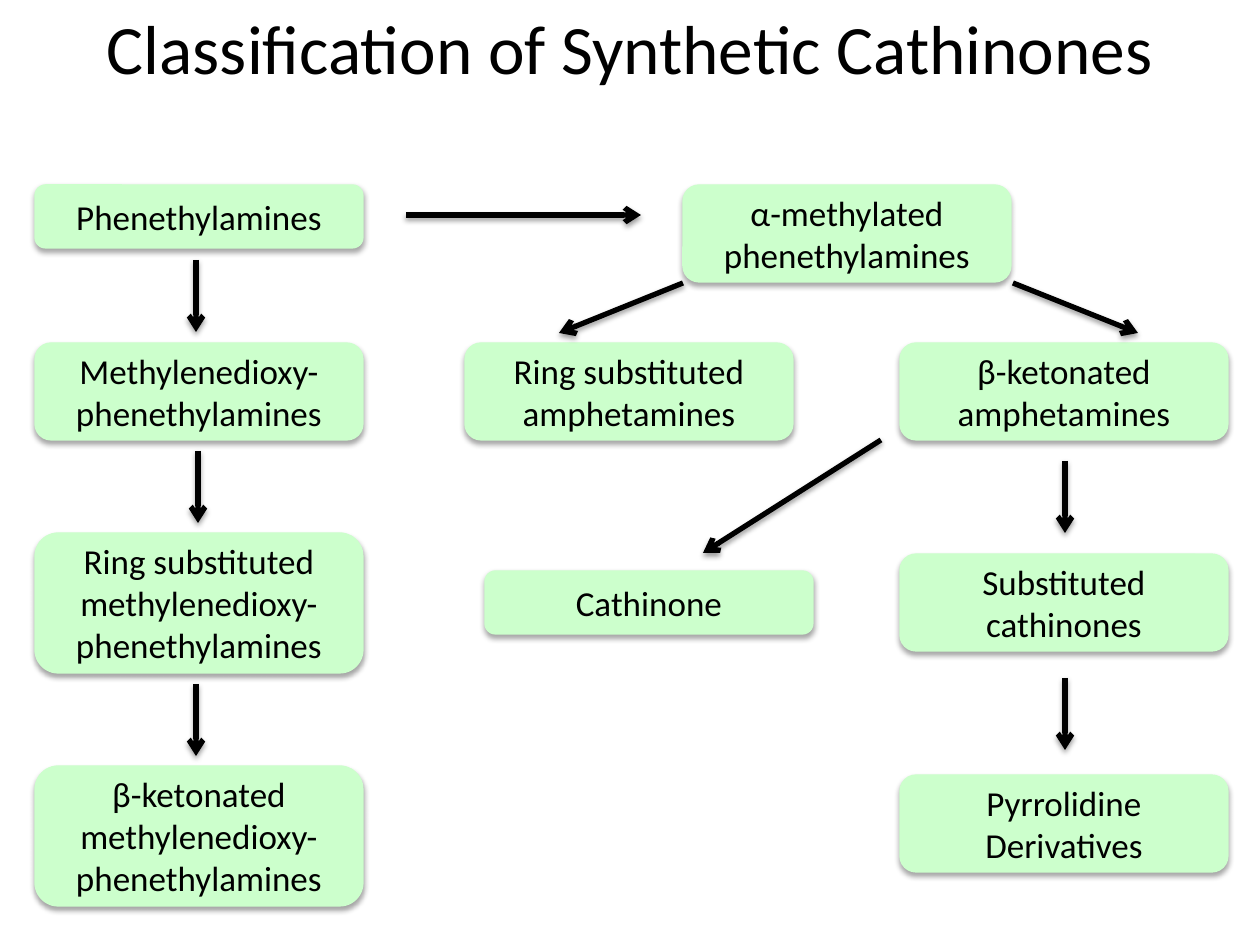
"""Build the flow chart slide on the classification of synthetic cathinones."""
from lxml.etree import SubElement
from pptx import Presentation
from pptx.dml.color import RGBColor
from pptx.enum.shapes import MSO_CONNECTOR, MSO_SHAPE
from pptx.enum.text import MSO_ANCHOR, PP_ALIGN
from pptx.oxml.ns import qn
from pptx.util import Emu, Pt

COLORS = {"box": "CCFFCC", "ink": "000000"}
FONT = "Calibri"
BOX_W = 328
HEIGHTS = {1: 63, 2: 97, 3: 140}


def px(*values):
    return [Emu(round(v * 914400 / 126)) for v in values]


def write(tf, text, size=20, color="ink", align=PP_ALIGN.CENTER):
    tf.vertical_anchor = MSO_ANCHOR.MIDDLE
    for i, line in enumerate(text.split("\n")):
        p = tf.paragraphs[0] if i == 0 else tf.add_paragraph()
        p.alignment = align
        r = p.add_run()
        r.text = line
        r.font.name = FONT
        r.font.size = Pt(size)
        r.font.color.rgb = RGBColor.from_string(COLORS[color])


prs = Presentation()
prs.slide_width, prs.slide_height = px(1260, 945)
s = prs.slides.add_slide(prs.slide_layouts[5])

title = s.shapes.title
title.left, title.top, title.width, title.height = px(63, -32, 1134, 158)
write(title.text_frame, "Classification of Synthetic Cathinones", size=39.6)

boxes = [
    (35, 185, "Phenethylamines"),
    (683, 185, "α-methylated\nphenethylamines"),
    (35, 343, "Methylenedioxy-\nphenethylamines"),
    (35, 533, "Ring substituted\nmethylenedioxy-\nphenethylamines"),
    (35, 766, "β-ketonated\nmethylenedioxy-\nphenethylamines"),
    (465, 343, "Ring substituted\namphetamines"),
    (900, 343, "β-ketonated\namphetamines"),
    (485, 571, "Cathinone"),
    (900, 554, "Substituted\ncathinones"),
    (900, 775, "Pyrrolidine\nDerivatives"),
]
shadows = []
for x, y, text in boxes:
    h = HEIGHTS[text.count("\n") + 1]
    sp = s.shapes.add_shape(MSO_SHAPE.ROUNDED_RECTANGLE, *px(x, y, BOX_W, h))
    sp.fill.solid()
    sp.fill.fore_color.rgb = RGBColor.from_string(COLORS["box"])
    sp.line.color.rgb = RGBColor.from_string(COLORS["box"])
    sp.line.width = Pt(0.75)
    sp.shadow.inherit = False
    tf = sp.text_frame
    tf.word_wrap = False
    tf.margin_top = tf.margin_bottom = 0
    write(tf, text)
    shadows.append((sp._element.spPr.find(qn("a:effectLst")), 35, 1.8))

arrows = [
    (406, 215, 641, 215),
    (196, 260, 196, 332),
    (198, 451, 198, 523),
    (196, 684, 196, 756),
    (683, 283, 559, 333),
    (1013, 283, 1138, 333),
    (881, 440, 703, 553),
    (1065, 461, 1065, 533),
    (1065, 678, 1065, 750),
]
for ends in arrows:
    cx = s.shapes.add_connector(MSO_CONNECTOR.STRAIGHT, *px(*ends))
    cx.line.color.rgb = RGBColor.from_string(COLORS["ink"])
    cx.line.width = Pt(3)
    spPr = cx._element.spPr
    SubElement(spPr.find(qn("a:ln")), qn("a:tailEnd"), type="arrow")
    shadows.append((SubElement(spPr, qn("a:effectLst")), 38, 1.6))

for effects, alpha, dist in shadows:
    shadow = SubElement(effects, qn("a:outerShdw"), blurRad=str(Pt(3.1)),
                        dist=str(Pt(dist)), dir="5400000", rotWithShape="0")
    clr = SubElement(shadow, qn("a:srgbClr"), val=COLORS["ink"])
    SubElement(clr, qn("a:alpha"), val=str(alpha * 1000))

prs.save("out.pptx")
